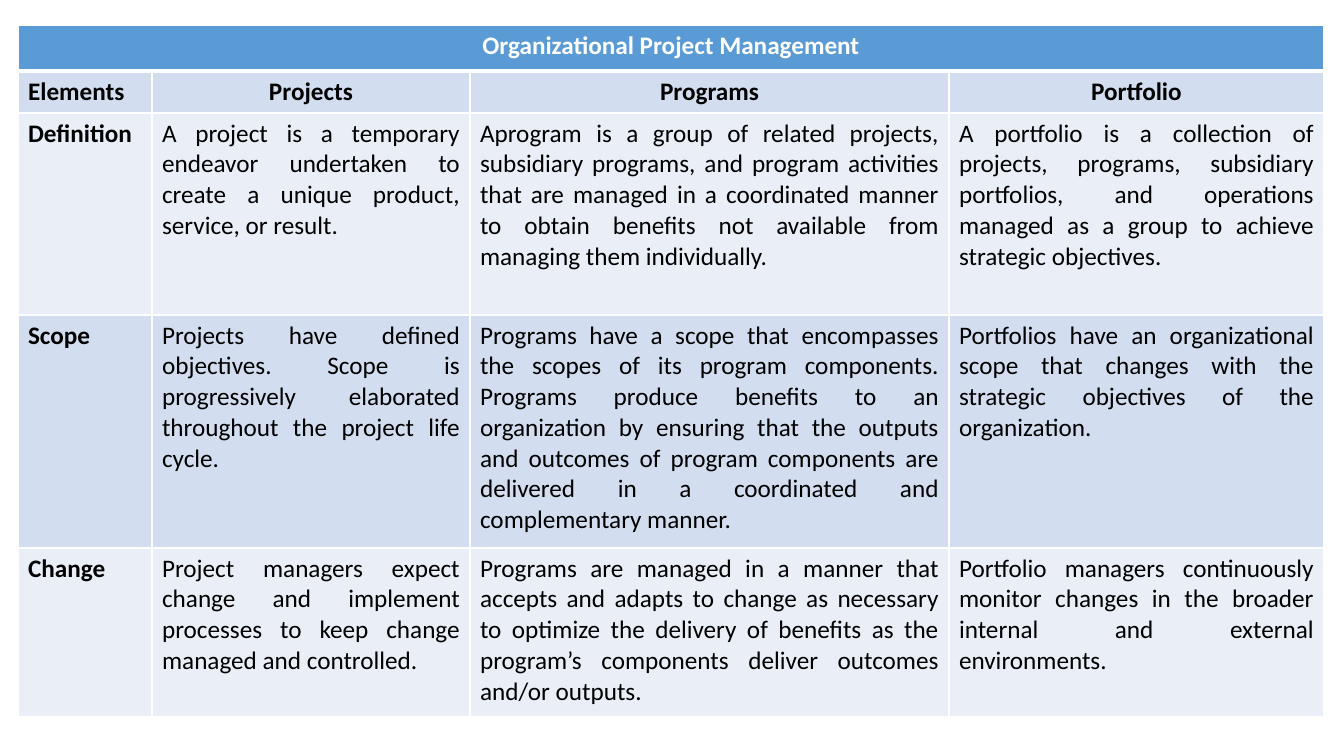
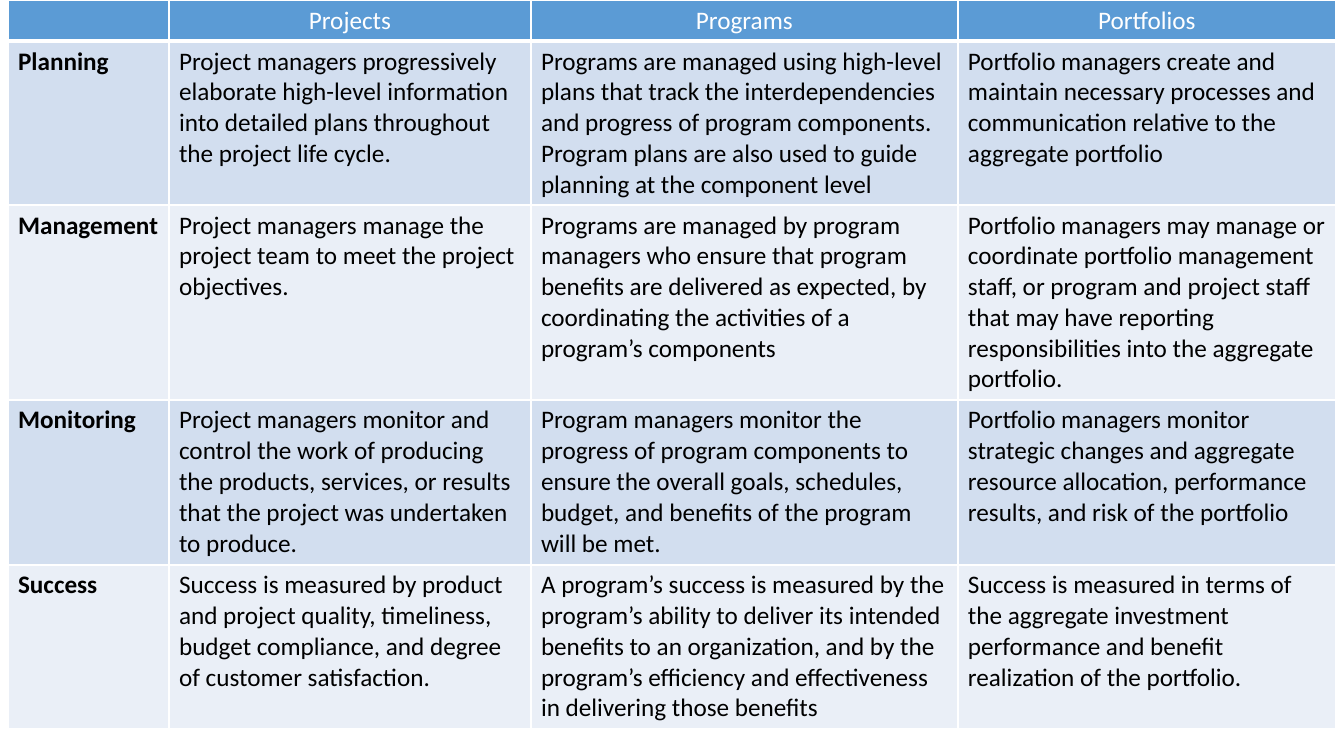
from lxml import etree
from pptx import Presentation
from pptx.dml.color import RGBColor
from pptx.enum.text import PP_ALIGN
from pptx.oxml.ns import qn
from pptx.util import Pt

LEFT, MID, JUST = PP_ALIGN.LEFT, PP_ALIGN.CENTER, PP_ALIGN.JUSTIFY
WIDE, HIGH = 1344, 756
SCALE = 12192000 / WIDE
HUES = {"head": "5B9BD5", "dark": "D2DEEF", "light": "EAEFF7", "line": "FFFFFF", "ink": "000000"}
FONT = {"name": "Calibri", "size": Pt(18)}


def px(n):
    return round(n * SCALE)


def edge(cell, side, width):
    props = cell._tc.get_or_add_tcPr()
    line = etree.SubElement(props, qn("a:ln" + side), w=str(Pt(width)))
    fill = etree.SubElement(line, qn("a:solidFill"))
    etree.SubElement(fill, qn("a:srgbClr"), val=HUES["line"])


PAGES = [
    {
        "at": (18, 25),
        "cols": [134, 318, 479, 375],
        "rows": [46, 42, 202, 233, 169],
        "span": True,
        "bold": 2,
        "align": JUST,
        "text": [
            ["Organizational Project Management", "", "", ""],
            ["Elements", "Projects", "Programs", "Portfolio"],
            [
                "Definition",
                "A project is a temporary endeavor undertaken to create a unique product, service, or result.",
                "Aprogram is a group of related projects, subsidiary programs, and program activities that are "
                "managed in a coordinated manner to obtain benefits not available from managing them individually.",
                "A portfolio is a collection of projects, programs, subsidiary portfolios, and operations "
                "managed as a group to achieve strategic objectives.",
            ],
            [
                "Scope",
                "Projects have defined objectives. Scope is progressively elaborated throughout the project "
                "life cycle.",
                "Programs have a scope that encompasses the scopes of its program components. Programs produce "
                "benefits to an organization by ensuring that the outputs and outcomes of program components "
                "are delivered in a coordinated and complementary manner.",
                "Portfolios have an organizational scope that changes with the strategic objectives of the "
                "organization.",
            ],
            [
                "Change",
                "Project managers expect change and implement processes to keep change managed and controlled.",
                "Programs are managed in a manner that accepts and adapts to change as necessary to optimize "
                "the delivery of benefits as the program’s components deliver outcomes and/or outputs.",
                "Portfolio managers continuously monitor changes in the broader internal and external "
                "environments.",
            ],
        ],
    },
    {
        "at": (8, 0),
        "cols": [161, 362, 427, 378],
        "rows": [41, 164, 195, 165, 164],
        "span": False,
        "bold": 0,
        "align": LEFT,
        "text": [
            ["", "Projects", "Programs", "Portfolios"],
            [
                "Planning",
                "Project managers progressively elaborate high-level information into detailed plans "
                "throughout the project life cycle.",
                "Programs are managed using high-level plans that track the interdependencies and progress of "
                "program components. Program plans are also used to guide planning at the component level",
                "Portfolio managers create and maintain necessary processes and communication relative to the "
                "aggregate portfolio",
            ],
            [
                "Management",
                "Project managers manage the project team to meet the project objectives.",
                "Programs are managed by program managers who ensure that program benefits are delivered as "
                "expected, by coordinating the activities of a program’s components",
                "Portfolio managers may manage or coordinate portfolio management staff, or program and "
                "project staff that may have reporting responsibilities into the aggregate portfolio.",
            ],
            [
                "Monitoring",
                "Project managers monitor and control the work of producing the products, services, or "
                "results that the project was undertaken to produce.",
                "Program managers monitor the progress of program components to ensure the overall goals, "
                "schedules, budget, and benefits of the program will be met.",
                "Portfolio managers monitor strategic changes and aggregate resource allocation, performance "
                "results, and risk of the portfolio",
            ],
            [
                "Success",
                "Success is measured by product and project quality, timeliness, budget compliance, and "
                "degree of customer satisfaction.",
                "A program’s success is measured by the program’s ability to deliver its intended benefits to "
                "an organization, and by the program’s efficiency and effectiveness in delivering those "
                "benefits",
                "Success is measured in terms of the aggregate investment performance and benefit realization "
                "of the portfolio.",
            ],
        ],
    },
]

deck = Presentation()
deck.slide_width, deck.slide_height = px(WIDE), px(HIGH)

for page in PAGES:
    slide = deck.slides.add_slide(deck.slide_layouts[6])
    cols, rows = page["cols"], page["rows"]
    box = [px(n) for n in (*page["at"], sum(cols), sum(rows))]
    table = slide.shapes.add_table(len(rows), len(cols), *box).table
    table.horz_banding = False
    for col, width in zip(table.columns, cols):
        col.width = px(width)
    for row, height in zip(table.rows, rows):
        row.height = px(height)
    if page["span"]:
        table.cell(0, 0).merge(table.cell(0, len(cols) - 1))

    for r, words in enumerate(page["text"]):
        tone = "head" if r == 0 else "dark" if r % 2 else "light"
        for c, word in enumerate(words):
            cell = table.cell(r, c)
            for side in "LRTB":
                thick = (r, side) in ((0, "B"), (1, "T"))
                edge(cell, side, 3 if thick else 1)
            cell.fill.solid()
            cell.fill.fore_color.rgb = RGBColor.from_string(HUES[tone])
            if not word:
                continue
            para = cell.text_frame.paragraphs[0]
            title = r == 0 or (r < page["bold"] and c > 0)
            para.alignment = MID if title else page["align"] if c else LEFT
            run = para.add_run()
            run.text = word
            style = {**FONT, "bold": r < page["bold"] or c == 0}
            for key, value in style.items():
                setattr(run.font, key, value)
            run.font.color.rgb = RGBColor.from_string(HUES["ink" if r else "line"])

deck.save("out.pptx")
